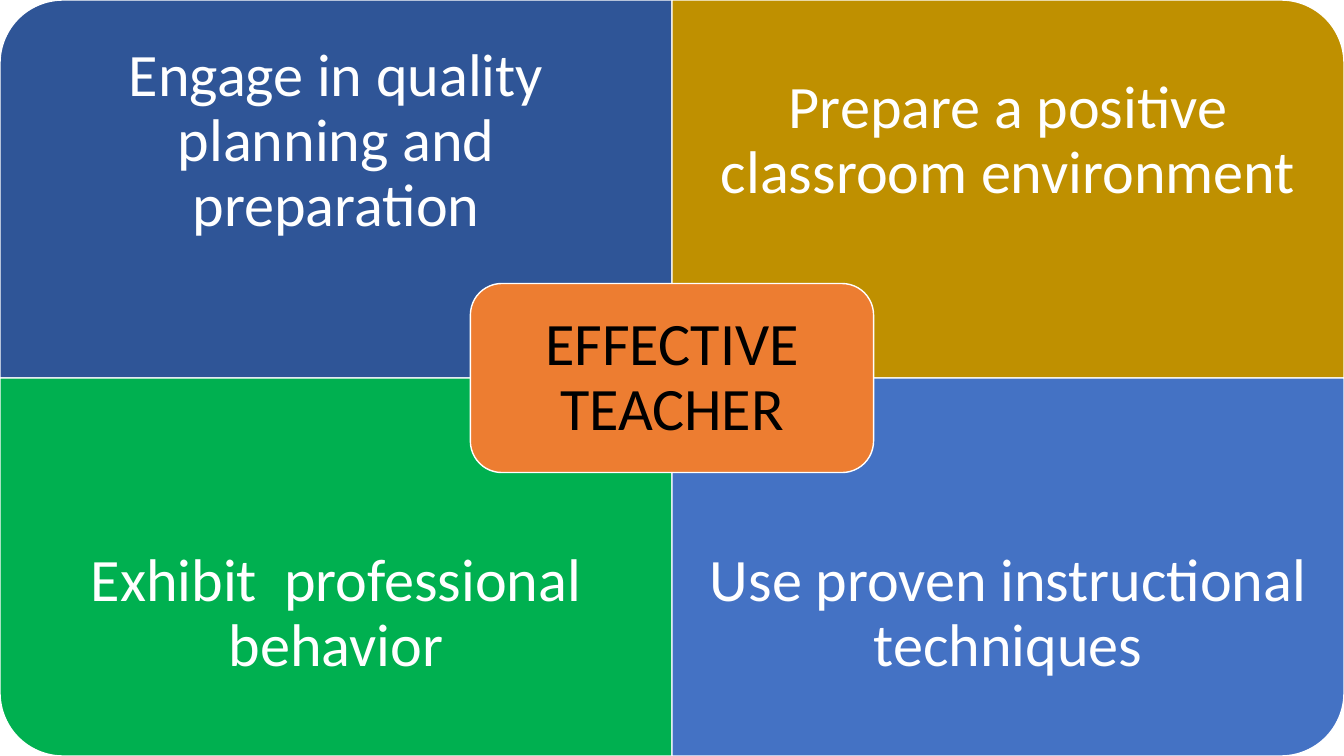
from pptx import Presentation
from pptx.dml.color import RGBColor
from pptx.enum.shapes import MSO_SHAPE
from pptx.enum.text import MSO_ANCHOR, PP_ALIGN
from pptx.util import Cm, Pt

ROUND_ONE = MSO_SHAPE.ROUND_1_RECTANGLE
ROUNDED = MSO_SHAPE.ROUNDED_RECTANGLE
MIDDLE = MSO_ANCHOR.MIDDLE
CENTER = PP_ALIGN.CENTER

COLORS = {
    "navy": "2F5597",
    "gold": "BF9000",
    "green": "00B050",
    "blue": "4472C4",
    "orange": "ED7D31",
    "white": "FFFFFF",
    "black": "000000",
}

# text, fill, column, row, rotation that turns the round corner outwards
QUADRANTS = [
    ("Engage in quality planning and preparation", "navy", 0, 0, 270),
    ("Prepare a positive classroom environment", "gold", 1, 0, 0),
    ("Exhibit  professional behavior", "green", 0, 1, 180),
    ("Use proven instructional techniques", "blue", 1, 1, 90),
]
CENTER_TEXT = "EFFECTIVE TEACHER"

SLIDE_WIDTH, SLIDE_HEIGHT = 33.87, 19.05
QUADRANT_WIDTH, QUADRANT_HEIGHT = SLIDE_WIDTH / 2, SLIDE_HEIGHT / 2
TEXT_HEIGHT = QUADRANT_HEIGHT * 0.75
CENTER_WIDTH, CENTER_HEIGHT = QUADRANT_WIDTH * 0.6, QUADRANT_HEIGHT / 2
CENTER_INSET = 0.23


def color(name):
    return RGBColor.from_string(COLORS[name])


def add_panel(slide, kind, left, top, width, height, fill, rotation=0):
    """Add a white-edged panel that covers the given box after rotation."""
    if rotation % 180:
        left += (width - height) / 2
        top += (height - width) / 2
        width, height = height, width
    shape = slide.shapes.add_shape(kind, Cm(left), Cm(top), Cm(width), Cm(height))
    shape.rotation = rotation
    shape.shadow.inherit = False
    shape.fill.solid()
    shape.fill.fore_color.rgb = color(fill)
    shape.line.color.rgb = color("white")
    shape.line.width = Pt(1)


def add_label(slide, text, left, top, width, height, margin, font_color):
    box = slide.shapes.add_textbox(Cm(left), Cm(top), Cm(width), Cm(height))
    frame = box.text_frame
    frame.word_wrap = True
    frame.vertical_anchor = MIDDLE
    frame.margin_left = frame.margin_right = Cm(margin)
    frame.margin_top = frame.margin_bottom = Cm(margin)
    paragraph = frame.paragraphs[0]
    paragraph.text = text
    paragraph.alignment = CENTER
    paragraph.line_spacing = 0.9
    paragraph.font.name = "Calibri"
    paragraph.font.size = Pt(43)
    paragraph.font.color.rgb = color(font_color)


def main():
    presentation = Presentation()
    presentation.slide_width = Cm(SLIDE_WIDTH)
    presentation.slide_height = Cm(SLIDE_HEIGHT)
    slide = presentation.slides.add_slide(presentation.slide_layouts[6])

    for text, fill, column, row, rotation in QUADRANTS:
        left, top = column * QUADRANT_WIDTH, row * QUADRANT_HEIGHT
        add_panel(slide, ROUND_ONE, left, top, QUADRANT_WIDTH, QUADRANT_HEIGHT,
                  fill, rotation)
        text_top = row * (SLIDE_HEIGHT - TEXT_HEIGHT)
        add_label(slide, text, left, text_top, QUADRANT_WIDTH, TEXT_HEIGHT,
                  0.84, "white")

    left = (SLIDE_WIDTH - CENTER_WIDTH) / 2
    top = (SLIDE_HEIGHT - CENTER_HEIGHT) / 2
    add_panel(slide, ROUNDED, left, top, CENTER_WIDTH, CENTER_HEIGHT, "orange")
    add_label(slide, CENTER_TEXT, left + CENTER_INSET, top + CENTER_INSET,
              CENTER_WIDTH - 2 * CENTER_INSET, CENTER_HEIGHT - 2 * CENTER_INSET,
              0.46, "black")

    presentation.save("out.pptx")


if __name__ == "__main__":
    main()
